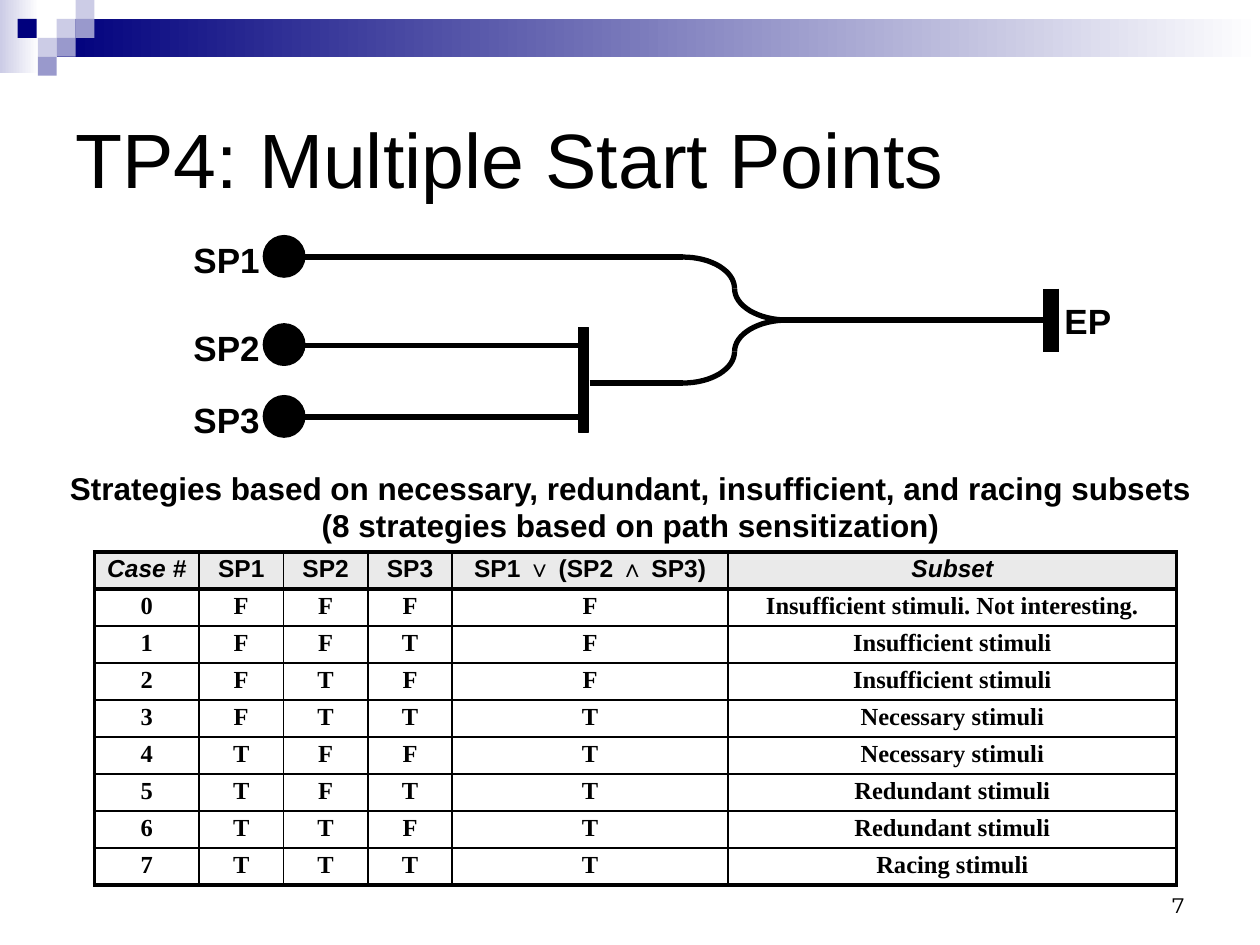
from math import cos, pi, sin

from lxml import etree
from pptx import Presentation
from pptx.dml.color import RGBColor
from pptx.enum.shapes import MSO_CONNECTOR, MSO_SHAPE
from pptx.enum.text import MSO_ANCHOR, PP_ALIGN
from pptx.oxml.ns import qn
from pptx.util import Inches, Pt

RECTANGLE, OVAL = MSO_SHAPE.RECTANGLE, MSO_SHAPE.OVAL
STRAIGHT = MSO_CONNECTOR.STRAIGHT
TOP, MIDDLE, BOTTOM = MSO_ANCHOR.TOP, MSO_ANCHOR.MIDDLE, MSO_ANCHOR.BOTTOM
LEFT, CENTER, RIGHT = PP_ALIGN.LEFT, PP_ALIGN.CENTER, PP_ALIGN.RIGHT

BLACK = RGBColor(0x00, 0x00, 0x00)
WHITE = RGBColor(0xFF, 0xFF, 0xFF)
NAVY = RGBColor(0x00, 0x00, 0x7D)
LAVENDER = RGBColor(0xCC, 0xCC, 0xE6)
PERIWINKLE = RGBColor(0x99, 0x99, 0xCC)
HEADER_GRAY = RGBColor(0xEA, 0xEA, 0xEA)

HEADING_FONT, BODY_FONT, NUMBER_FONT = "Arial", "Times New Roman", "Montserrat"


class SlideBuilder:
    """Draws elements in the common style on one slide."""

    path_width = 3
    arc_steps = 16
    thin_border, thick_border = 1, 2.25

    def __init__(self, slide):
        self.slide = slide
        self.shapes = slide.shapes

    def shape(self, kind, left, top, width, height, color, fade_to=None):
        shape = self.shapes.add_shape(
            kind, Inches(left), Inches(top), Inches(width), Inches(height))
        shape.shadow.inherit = False
        shape.line.fill.background()
        if fade_to is None:
            shape.fill.solid()
            shape.fill.fore_color.rgb = color
        else:
            shape.fill.gradient()
            shape.fill.gradient_angle = 0
            stops = shape.fill.gradient_stops
            for stop, position, stop_color in zip(stops, (0, 1), (color, fade_to)):
                stop.position = position
                stop.color.rgb = stop_color
        return shape

    def symbol(self, kind, left, top, width, height):
        shape = self.shape(kind, left, top, width, height, BLACK)
        shape.line.color.rgb = BLACK
        shape.line.width = Pt(0.75)

    def line(self, x1, y1, x2, y2, width=path_width):
        line = self.shapes.add_connector(
            STRAIGHT, Inches(x1), Inches(y1), Inches(x2), Inches(y2))
        line.line.color.rgb = BLACK
        line.line.width = Pt(width)
        etree.SubElement(line._element.spPr, qn("a:effectLst"))

    def arc(self, flat_end, steep_end):
        """Quarter ellipse, horizontal at flat_end and vertical at steep_end."""
        center_x, center_y = flat_end[0], steep_end[1]
        radius_x, radius_y = steep_end[0] - center_x, flat_end[1] - center_y
        angles = [pi / 2 * step / self.arc_steps for step in range(self.arc_steps + 1)]
        points = [(Inches(center_x + radius_x * sin(angle)),
                   Inches(center_y + radius_y * cos(angle))) for angle in angles]
        builder = self.shapes.build_freeform(*points[0])
        builder.add_line_segments(points[1:], close=False)
        arc = builder.convert_to_shape()
        arc.shadow.inherit = False
        arc.fill.background()
        arc.line.color.rgb = BLACK
        arc.line.width = Pt(self.path_width)

    def format_text(self, text_frame, size, font, bold, align, italic=False):
        for paragraph in text_frame.paragraphs:
            paragraph.alignment = align
            for run in paragraph.runs:
                run.font.size = Pt(size)
                run.font.name = font
                run.font.bold = bold
                run.font.italic = italic
                run.font.color.rgb = BLACK

    def text(self, text, left, top, width, height, size, font=HEADING_FONT,
             bold=True, align=LEFT, anchor=TOP, wrap=True):
        box = self.shapes.add_textbox(
            Inches(left), Inches(top), Inches(width), Inches(height))
        box.text_frame.word_wrap = wrap
        box.text_frame.vertical_anchor = anchor
        box.text_frame.text = text
        self.format_text(box.text_frame, size, font, bold, align)

    def border(self, cell, side, width):
        line = etree.SubElement(
            cell._tc.get_or_add_tcPr(), qn("a:ln" + side), w=str(Pt(width)))
        fill = etree.SubElement(line, qn("a:solidFill"))
        etree.SubElement(fill, qn("a:srgbClr"), val=str(BLACK))

    def table(self, rows, left, top, column_widths, row_height, italic_headers):
        last_row, last_column = len(rows) - 1, len(column_widths) - 1
        table = self.shapes.add_table(
            len(rows), len(column_widths), Inches(left), Inches(top),
            Inches(sum(column_widths)), Inches(row_height * len(rows))).table
        table.first_row = table.horz_banding = False
        for column, width in zip(table.columns, column_widths):
            column.width = Inches(width)
        for row_index, row in enumerate(rows):
            table.rows[row_index].height = Inches(row_height)
            is_header = row_index == 0
            for column_index, value in enumerate(row):
                cell = table.cell(row_index, column_index)
                cell.margin_left = cell.margin_right = Inches(0.05)
                cell.margin_top = cell.margin_bottom = Inches(0.03)
                cell.text_frame.text = value
                self.format_text(
                    cell.text_frame, 14, HEADING_FONT if is_header else BODY_FONT,
                    True, CENTER, is_header and value in italic_headers)
                thick_sides = {
                    "L": column_index == 0,
                    "R": column_index == last_column,
                    "T": row_index <= 1,
                    "B": row_index in (0, last_row),
                }
                for side, thick in thick_sides.items():
                    self.border(cell, side, self.thick_border if thick else self.thin_border)
                if is_header:
                    cell.fill.solid()
                    cell.fill.fore_color.rgb = HEADER_GRAY
                else:
                    cell.fill.background()


def main():
    presentation = Presentation()
    presentation.slide_width, presentation.slide_height = Inches(10), Inches(7.5)
    builder = SlideBuilder(presentation.slides.add_slide(presentation.slide_layouts[6]))

    # Banner with its mosaic of squares
    builder.shape(RECTANGLE, 0, 0, 0.31, 0.58, LAVENDER, fade_to=WHITE)
    builder.shape(RECTANGLE, 0.45, 0.15, 9.55, 0.3, NAVY, fade_to=WHITE)
    square = 0.15
    for left, top, color in (
            (0.45, 0.15, LAVENDER), (0.6, 0, LAVENDER), (0.6, 0.15, PERIWINKLE),
            (0.3, 0.3, LAVENDER), (0.14, 0.15, NAVY), (0.45, 0.3, PERIWINKLE),
            (0.3, 0.45, PERIWINKLE)):
        builder.shape(RECTANGLE, left, top, square, square, color)

    # Page number, title and strategy caption
    builder.text("7", 7.17, 6.83, 2.33, 0.5, 12, NUMBER_FONT, False, RIGHT, BOTTOM)
    builder.text("TP4: Multiple Start Points", 0.5, 0.5, 9, 1.5, 44,
                 bold=False, anchor=MIDDLE)
    builder.text("Strategies based on necessary, redundant, insufficient, and racing subsets\n"
                 "(8 strategies based on path sensitization)",
                 0.42, 3.67, 9.17, 0.7, 18, align=CENTER)

    # Start points with their paths
    join_left, fork_x, bend_x, merge_x = 4.59, 5.42, 5.83, 6.25
    for name, y, path_end in (("SP1", 2.04, fork_x), ("SP2", 2.74, join_left),
                              ("SP3", 3.31, join_left)):
        builder.line(2.18, y, path_end, y)
        builder.symbol(OVAL, 2.09, y - 0.17, 0.33, 0.33)
        builder.text(name, 1.43, y - 0.2, 0.73, 0.43, 20, align=RIGHT, wrap=False)

    # AND join, then the two branches merging
    builder.symbol(RECTANGLE, join_left, 2.6, 0.08, 0.83)
    builder.line(4.68, 3.04, fork_x, 3.04)
    merge_y = 2.54
    for branch_y, bend_y in ((2.04, 2.29), (3.04, 2.79)):
        builder.arc((fork_x, branch_y), (bend_x, bend_y))
        builder.arc((merge_x, merge_y), (bend_x, bend_y))

    # End point
    builder.line(6.18, merge_y, 8.34, merge_y)
    builder.line(8.34, 2.29, 8.34, 2.79, width=9)
    builder.text("EP", 8.35, 2.33, 0.57, 0.43, 20, wrap=False)

    # Truth table
    rows = [
        ("Case #", "SP1", "SP2", "SP3", "SP1 ∨ (SP2 ∧ SP3)", "Subset"),
        ("0", "F", "F", "F", "F", "Insufficient stimuli. Not interesting."),
        ("1", "F", "F", "T", "F", "Insufficient stimuli"),
        ("2", "F", "T", "F", "F", "Insufficient stimuli"),
        ("3", "F", "T", "T", "T", "Necessary stimuli"),
        ("4", "T", "F", "F", "T", "Necessary stimuli"),
        ("5", "T", "F", "T", "T", "Redundant stimuli"),
        ("6", "T", "T", "F", "T", "Redundant stimuli"),
        ("7", "T", "T", "T", "T", "Racing stimuli"),
    ]
    builder.table(rows, 0.75, 4.38, (0.83, 0.67, 0.67, 0.67, 2.19, 3.56),
                  2.64 / len(rows), ("Case #", "Subset"))

    presentation.save("out.pptx")


if __name__ == "__main__":
    main()
